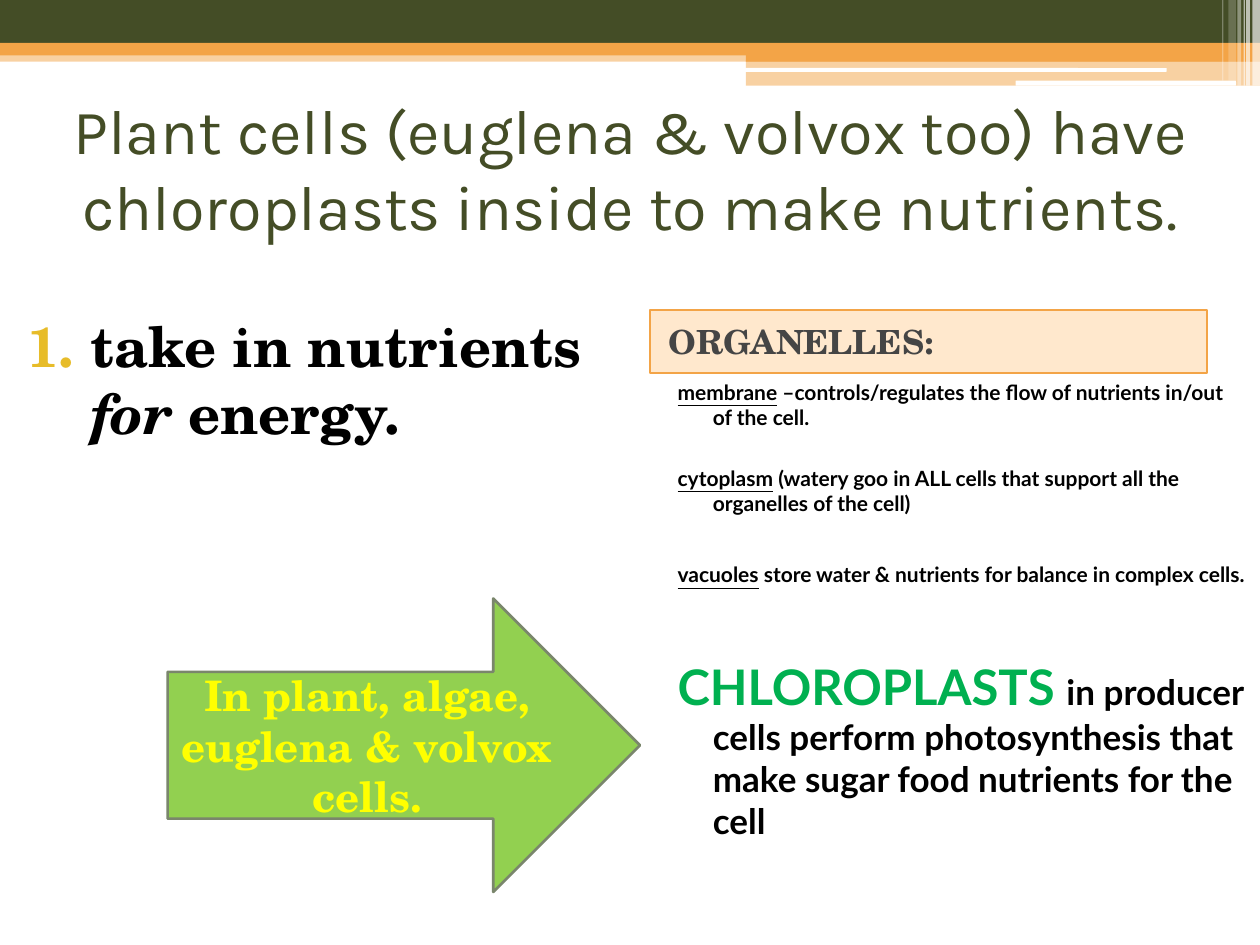
from lxml import etree
from pptx import Presentation
from pptx.dml.color import RGBColor
from pptx.enum import shapes, text
from pptx.oxml import ns
from pptx.util import Inches, Pt

OLIVE = RGBColor(0x44, 0x4D, 0x26)
ORANGE = RGBColor(0xF3, 0xA4, 0x47)
PEACH = RGBColor(0xFF, 0xA5, 0x3B)
WHITE = RGBColor(0xFF, 0xFF, 0xFF)
BLACK = RGBColor(0x00, 0x00, 0x00)
GRAY = RGBColor(0x45, 0x45, 0x45)
GOLD = RGBColor(0xE7, 0xBC, 0x29)
LIME = RGBColor(0x92, 0xD0, 0x50)
GREEN = RGBColor(0x00, 0xB0, 0x50)
YELLOW = RGBColor(0xFF, 0xFF, 0x00)
EDGE = RGBColor(0x7A, 0x86, 0x6C)
SERIF, SANS = "TeX Gyre Schola", "Lato"
KIND = shapes.MSO_SHAPE

deck = Presentation()
deck.slide_width, deck.slide_height = Inches(10), Inches(7.5)
page = deck.slides.add_slide(deck.slide_layouts[6])


def add_box(kind, place, color=None, opacity=100, line=None, line_width=1):
    """Add a preset shape, or a text box when kind is None."""
    place = [Inches(length) for length in place]
    if kind is None:
        box = page.shapes.add_textbox(*place)
    else:
        box = page.shapes.add_shape(kind, *place)
        box.shadow.inherit = False
        box.fill.solid()
        box.fill.fore_color.rgb = color
        if opacity < 100:
            tint = box.fill._xPr.find(".//" + ns.qn("a:srgbClr"))
            etree.SubElement(tint, ns.qn("a:alpha"), val=str(opacity * 1000))
        if line is None:
            box.line.fill.background()
        else:
            box.line.color.rgb = line
            box.line.width = Pt(line_width)
    box.text_frame.word_wrap = True
    return box


def add_para(box, runs, align=text.PP_ALIGN.LEFT, before=0, margin=0, indent=0):
    """Fill the first paragraph, or append one; runs are (text, size, font, color, style)."""
    frame = box.text_frame
    para = frame.paragraphs[0]
    if para.runs:
        para = frame.add_paragraph()
    para.alignment = align
    para.space_before = Pt(before)
    props = para._p.get_or_add_pPr()
    props.set("marL", str(Inches(margin)))
    props.set("indent", str(Inches(indent)))
    for words, size, font, color, style in runs:
        span = para.add_run()
        span.text = words
        span.font.size = Pt(size)
        span.font.name = font
        span.font.color.rgb = color
        span.font.bold = "b" in style
        span.font.italic = "i" in style
        span.font.underline = "u" in style
    return props


# Header bands
for kind, place, color, opacity in [
    (KIND.RECTANGLE, (0, 0.4, 10, 0.09), ORANGE, 50),
    (KIND.RECTANGLE, (0, 0, 10, 0.34), OLIVE, 100),
    (KIND.RECTANGLE, (0, 0.34, 10, 0.1), ORANGE, 100),
    (KIND.RECTANGLE, (5.92, 0.39, 4.08, 0.1), ORANGE, 100),
    (KIND.RECTANGLE, (5.92, 0.48, 4.08, 0.2), ORANGE, 50),
    (KIND.ROUNDED_RECTANGLE, (5.91, 0.54, 3.35, 0.03), WHITE, 100),
    (KIND.ROUNDED_RECTANGLE, (8.06, 0.64, 1.75, 0.04), WHITE, 100),
]:
    add_box(kind, place, color, opacity)

# Pale vertical stripes at the right end of the header
for left, width, height, opacity in [
    (9.94, 0.06, 0.68, 65), (9.89, 0.03, 0.68, 65), (9.87, 0.01, 0.68, 60),
    (9.82, 0.03, 0.68, 40), (9.75, 0.06, 0.64, 20), (9.7, 0.01, 0.64, 30),
]:
    add_box(KIND.RECTANGLE, (left, 0, width, height), WHITE, opacity)

# Title
title = add_box(None, (0.42, 0.83, 9.17, 1))
title.text_frame.vertical_anchor = text.MSO_ANCHOR.MIDDLE
add_para(title, [("Plant cells (euglena & volvox too) have chloroplasts inside "
                  "to make nutrients.", 36, "Karla", OLIVE, "")],
         text.PP_ALIGN.CENTER)

# Organelles heading
heading = add_box(KIND.RECTANGLE, (5.16, 2.46, 4.42, 0.5), PEACH, 25, ORANGE)
heading.text_frame.vertical_anchor = text.MSO_ANCHOR.MIDDLE
add_para(heading, [("ORGANELLES:", 19, SERIF, GRAY, "b")], before=3, margin=0.05)

# Numbered point on the left
point = add_box(None, (0, 2.42, 4.84, 4.8))
props = add_para(point, [("take in nutrients ", 32, SERIF, BLACK, "b"),
                         ("for", 32, SERIF, BLACK, "bi"),
                         (" energy.", 32, SERIF, BLACK, "b")],
                 before=3, margin=0.62, indent=-0.5)
bullet_color = etree.SubElement(props, ns.qn("a:buClr"))
etree.SubElement(bullet_color, ns.qn("a:srgbClr"), val=str(GOLD))
etree.SubElement(props, ns.qn("a:buFont"), typeface=SERIF)
etree.SubElement(props, ns.qn("a:buAutoNum"), type="arabicPeriod")

# Organelle definitions
definitions = add_box(None, (5.16, 2.96, 4.84, 4.25))
for before, term, meaning in [
    (3, "membrane", " –controls/regulates the flow of nutrients in/out of the cell."),
    (20.4, "cytoplasm", " (watery goo in ALL cells that support all the organelles of the cell)"),
    (26.4, "vacuoles", " store water & nutrients for balance in complex cells."),
]:
    add_para(definitions, [(term, 12, SANS, BLACK, "bu"), (meaning, 12, SANS, BLACK, "b")],
             before=before, margin=0.4, indent=-0.28)
add_para(definitions, [("CHLOROPLASTS ", 28, SANS, GREEN, "b"),
                       ("in producer cells perform photosynthesis that make sugar food "
                        "nutrients for the cell", 20, SANS, BLACK, "b")],
         before=39.6, margin=0.4, indent=-0.28)

# Arrow pointing at the chloroplasts
arrow = add_box(KIND.RIGHT_ARROW, (1.33, 4.75, 3.75, 2.33), LIME, line=EDGE, line_width=1.5)
arrow.text_frame.vertical_anchor = text.MSO_ANCHOR.MIDDLE
add_para(arrow, [("In plant, algae, euglena & volvox cells.", 24, SERIF, YELLOW, "b")],
         text.PP_ALIGN.CENTER)

deck.save("out.pptx")
